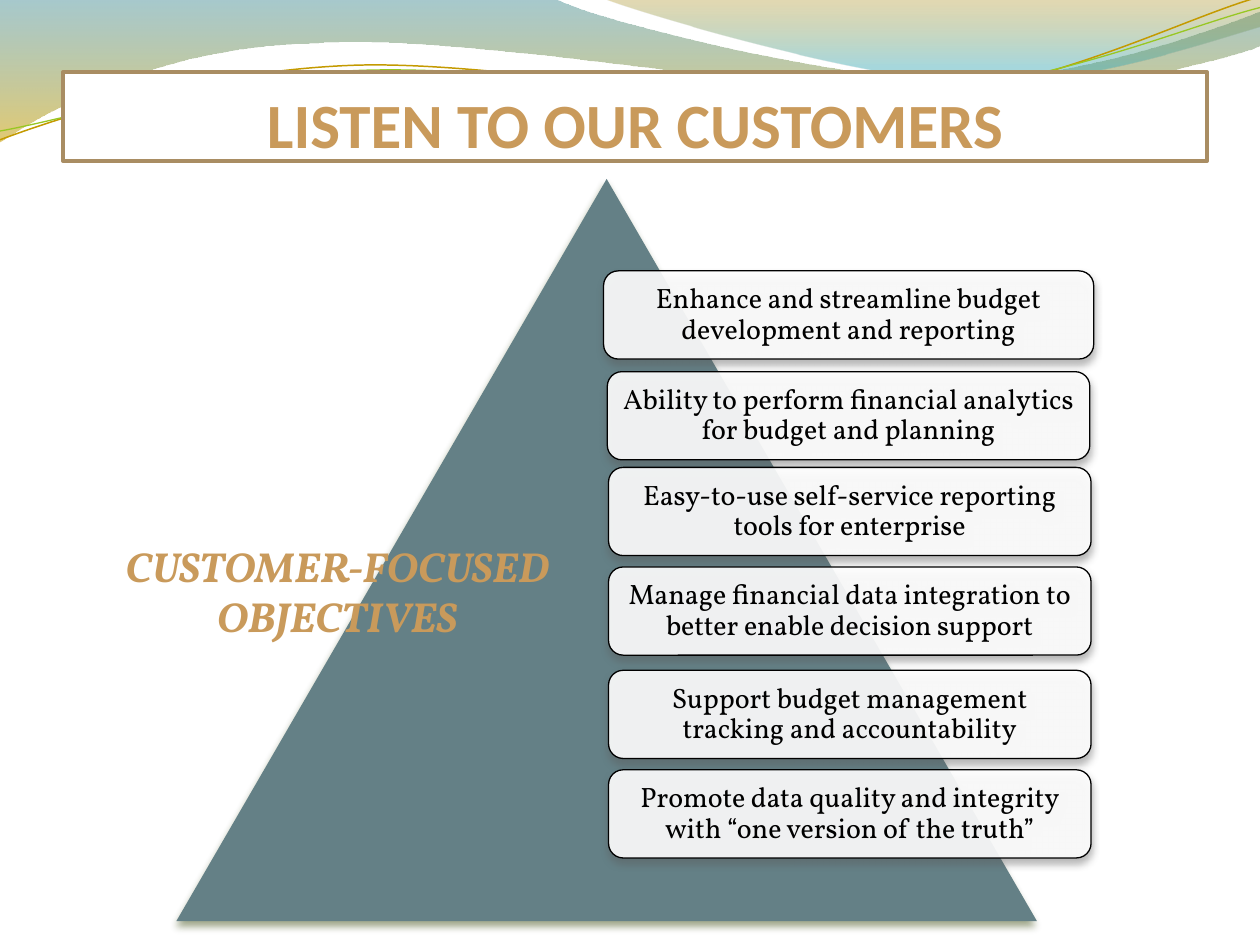
from dataclasses import dataclass

from lxml import etree
from pptx import Presentation
from pptx.dml.color import RGBColor
from pptx.enum.shapes import MSO_SHAPE
from pptx.enum.text import MSO_ANCHOR, PP_ALIGN
from pptx.oxml.ns import qn
from pptx.util import Inches, Pt

TRIANGLE = MSO_SHAPE.ISOSCELES_TRIANGLE
ROUNDED = MSO_SHAPE.ROUNDED_RECTANGLE
CENTER = PP_ALIGN.CENTER
MIDDLE = MSO_ANCHOR.MIDDLE
BOTTOM = MSO_ANCHOR.BOTTOM
TITLE_ONLY = 5


@dataclass(frozen=True)
class Theme:
    """Colours, fonts and type sizes of the slide."""
    white: str = "FFFFFF"
    black: str = "000000"
    gold: str = "C99A5B"
    frame: str = "A98D63"
    slate: str = "648086"
    pyramid_shadow: str = "36470B"
    card_shadow: str = "5A5A5A"
    heading_font: str = "Calibri"
    body_font: str = "Vollkorn"
    title_size: int = 36
    label_size: int = 24
    card_size: int = 16


THEME = Theme()

WAVES = [
    ([(0, 0), (4.4, -0.01),
      ((4.76, 0.17), (6.64, 0.63), (7.58, 0.63)),
      ((8.53, 0.63), (9.58, 0.26), (10, 0.09)),
      (10.01, 0.36),
      ((9.83, 0.44), (8.7, 0.76), (7.46, 0.75)),
      ((6.22, 0.75), (3.82, 0.28), (2.57, 0.34)),
      ((1.29, 0.36), (0.46, 0.83), (-0.01, 1.13))],
     [(0, "3B8890", 45), (100, "C99E00", 55)]),
    ([(4.79, -0.01),
      ((5.09, 0.11), (6.82, 0.62), (7.69, 0.65)),
      ((8.56, 0.69), (9.61, 0.32), (10, 0.21)),
      (10, 0)],
     [(0, "A48100", 30), (80, "3EA9B4", 45)]),
]

STRANDS = [
    ([(0, 1.11),
      ((0.48, 0.93), (1.58, 0.57), (2.77, 0.52)),
      ((3.95, 0.47), (5.93, 0.89), (7.13, 0.8)),
      ((8.33, 0.71), (9.38, 0.15), (9.98, -0.02))],
     "C49A00", 0.85),
    ([(0, 1.04),
      ((0.47, 0.96), (1.64, 0.61), (2.83, 0.56)),
      ((4.03, 0.51), (5.97, 0.84), (7.17, 0.75)),
      ((8.36, 0.67), (9.41, 0.21), (10, 0.06))],
     "98C723", 0.75),
]

OBJECTIVES = [
    (4.79, 2.15, 3.89, "Enhance and streamline budget development and reporting"),
    (4.82, 2.95, 3.83, "Ability to perform financial analytics for budget and planning"),
    (4.83, 3.71, 3.83, "Easy-to-use self-service reporting tools for enterprise"),
    (4.83, 4.5, 3.83, "Manage financial data integration to better enable decision support"),
    (4.83, 5.32, 3.83, "Support budget management tracking and accountability"),
    (4.83, 6.11, 3.83, "Promote data quality and integrity with “one version of the truth”"),
]


def paint(fill, color):
    """Give a fill one solid colour."""
    fill.solid()
    fill.fore_color.rgb = RGBColor.from_string(color)


def outline(shape, color, width):
    """Give a shape a solid outline."""
    paint(shape.line.fill, color)
    shape.line.width = Pt(width)


def add_color(parent, color, opacity):
    """Append a colour with an opacity in percent."""
    node = etree.SubElement(parent, qn("a:srgbClr"), val=color)
    etree.SubElement(node, qn("a:alpha"), val=str(opacity * 1000))


def add_gradient(shape, stops):
    """Fill a shape with a translucent gradient from top to bottom."""
    shape.fill.background()
    no_fill = shape._element.spPr.find(qn("a:noFill"))
    gradient = etree.Element(qn("a:gradFill"), rotWithShape="1")
    stop_list = etree.SubElement(gradient, qn("a:gsLst"))
    for position, color, opacity in stops:
        stop = etree.SubElement(stop_list, qn("a:gs"), pos=str(position * 1000))
        add_color(stop, color, opacity)
    etree.SubElement(gradient, qn("a:lin"), ang="5400000", scaled="0")
    no_fill.getparent().replace(no_fill, gradient)


def add_shadow(shape, color):
    """Drop a soft shadow straight below a shape."""
    shape.shadow.inherit = False
    effects = shape._element.spPr.find(qn("a:effectLst"))
    shadow = etree.SubElement(
        effects, qn("a:outerShdw"), blurRad=str(Pt(4.5)), dist=str(Pt(3)),
        dir="5400000", rotWithShape="0")
    add_color(shadow, color, 48)


def is_curve(segment):
    """Tell whether a segment has two control points and an end."""
    return len(segment) == 3


def add_curve(slide, segments, close):
    """Draw an outline of straight and curved segments."""
    anchors = [segment[-1] if is_curve(segment) else segment for segment in segments]
    corners = [(Inches(x), Inches(y)) for x, y in anchors]
    builder = slide.shapes.build_freeform(*corners[0])
    builder.add_line_segments(corners[1:], close=close)
    curve = builder.convert_to_shape()
    curve.shadow.inherit = False
    lines = list(curve._element.spPr.iter(qn("a:lnTo")))
    for line, segment in zip(lines, segments[1:]):
        if is_curve(segment):
            bend = etree.Element(qn("a:cubicBezTo"))
            for x, y in segment:
                etree.SubElement(bend, qn("a:pt"), x=str(Inches(x) - curve.left),
                                 y=str(Inches(y) - curve.top))
            line.getparent().replace(line, bend)
    return curve


def add_backdrop(slide):
    """Draw the waves and strands along the top edge."""
    for segments, stops in WAVES:
        wave = add_curve(slide, segments, True)
        add_gradient(wave, stops)
        wave.line.fill.background()
    for segments, color, width in STRANDS:
        strand = add_curve(slide, segments, False)
        strand.fill.background()
        outline(strand, color, width)


def write(frame, text, font, size, color, bold=False, italic=False):
    """Write one centred paragraph and return it."""
    frame.word_wrap = True
    frame.text = text
    paragraph = frame.paragraphs[0]
    paragraph.alignment = CENTER
    paragraph.font.name = font
    paragraph.font.size = Pt(size)
    paragraph.font.bold = bold
    paragraph.font.italic = italic
    paragraph.font.color.rgb = RGBColor.from_string(color)
    return paragraph


def set_title(slide, text):
    """Frame the title and bring it in front of the backdrop."""
    title = slide.shapes.title
    title.left, title.top = Inches(0.5), Inches(0.57)
    title.width, title.height = Inches(9.08), Inches(0.71)
    paint(title.fill, THEME.white)
    outline(title, THEME.frame, 2)
    frame = title.text_frame
    frame.vertical_anchor = BOTTOM
    frame.margin_left = frame.margin_right = frame.margin_bottom = 0
    frame.margin_top = Inches(0.05)
    write(frame, text, THEME.heading_font, THEME.title_size, THEME.gold, bold=True)
    title._element.getparent().append(title._element)


def add_pyramid(slide):
    """Draw the large triangle behind the objectives."""
    pyramid = slide.shapes.add_shape(
        TRIANGLE, Inches(1.4), Inches(1.42), Inches(6.83), Inches(5.89))
    paint(pyramid.fill, THEME.slate)
    pyramid.line.fill.background()
    add_shadow(pyramid, THEME.pyramid_shadow)


def add_objective(slide, left, top, width, text):
    """Draw one translucent card with its objective."""
    card = slide.shapes.add_shape(
        ROUNDED, Inches(left), Inches(top), Inches(width), Inches(0.7))
    paint(card.fill, THEME.white)
    color = card._element.spPr.find(qn("a:solidFill"))[0]
    etree.SubElement(color, qn("a:alpha"), val="90000")
    outline(card, THEME.black, 0.75)
    add_shadow(card, THEME.card_shadow)
    frame = card.text_frame
    frame.vertical_anchor = MIDDLE
    frame.margin_left = frame.margin_right = Inches(0.07)
    paragraph = write(frame, text, THEME.body_font, THEME.card_size, THEME.black)
    paragraph.line_spacing = 0.9


def add_label(slide, text):
    """Write the label beside the cards."""
    label = slide.shapes.add_textbox(
        Inches(0.72), Inches(4.24), Inches(3.91), Inches(0.91))
    write(label.text_frame, text, THEME.body_font, THEME.label_size, THEME.gold,
          bold=True, italic=True)


def main():
    """Build the slide and save it."""
    deck = Presentation()
    deck.slide_width, deck.slide_height = Inches(10), Inches(7.5)
    slide = deck.slides.add_slide(deck.slide_layouts[TITLE_ONLY])
    add_backdrop(slide)
    set_title(slide, "LISTEN TO OUR CUSTOMERS")
    add_pyramid(slide)
    for objective in OBJECTIVES:
        add_objective(slide, *objective)
    add_label(slide, "CUSTOMER-FOCUSED OBJECTIVES")
    deck.save("out.pptx")


if __name__ == "__main__":
    main()
